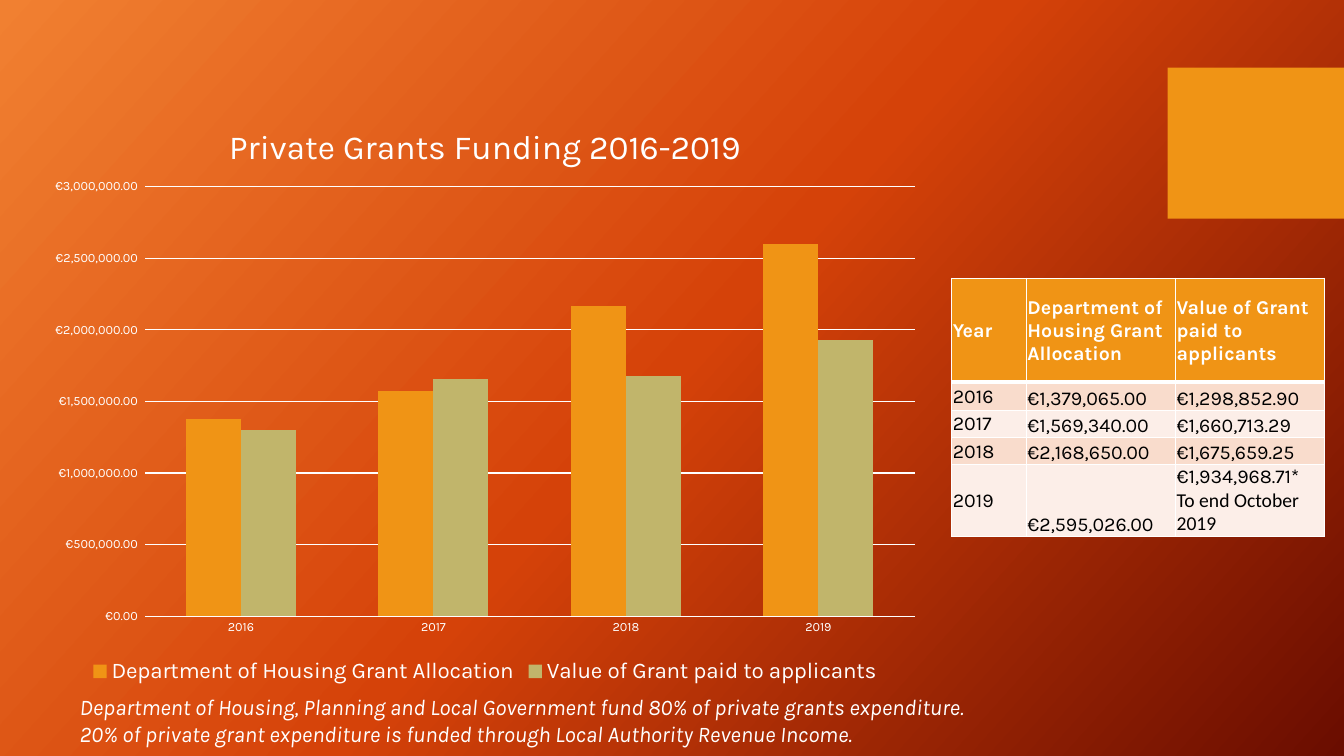
import copy
from dataclasses import dataclass

import pptx
import pptx.chart.data
import pptx.dml.color
import pptx.enum.chart
import pptx.enum.shapes
import pptx.enum.text
import pptx.oxml
import pptx.oxml.ns
import pptx.util
from pptx.util import Inches, Pt


@dataclass(frozen=True)
class Theme:
    font: str = "Karla"
    note_font: str = "Calibri"
    white: str = "FFFFFF"
    black: str = "000000"
    orange: str = "F09415"
    olive: str = "C1B56B"
    bands: tuple = ("F9DCCC", "FCEEE8")
    gradient: tuple = ("F18031", "D54209", "6A0D00")
    title_size: int = 24
    body_size: int = 16
    table_size: int = 14
    axis_size: int = 9


THEME = Theme()
HEADINGS = ("Year", "Department of Housing Grant Allocation",
            "Value of Grant paid to applicants")
GRANTS = (
    ("2016", 1379065.00, 1298852.90),
    ("2017", 1569340.00, 1660713.29),
    ("2018", 2168650.00, 1675659.25),
    ("2019", 2595026.00, 1934968.71),
)
FUNDING_NOTES = (
    "Department of Housing, Planning and Local Government fund 80% of private grants expenditure.",
    "20% of private grant expenditure is funded through Local Authority Revenue Income.",
)
EURO_FORMAT = r'"€"#,##0.00_);[Red]\("€"#,##0.00\)'


def rgb(colour):
    return pptx.dml.color.RGBColor.from_string(colour)


def paint(fill, colour):
    fill.solid()
    fill.fore_color.rgb = rgb(colour)


def style_font(font, size, colour=THEME.white, **extra):
    formats = {"name": THEME.font, "size": Pt(size), **extra}
    for attribute, value in formats.items():
        setattr(font, attribute, value)
    font.color.rgb = rgb(colour)


def paint_background(slide):
    fill = slide.background.fill
    fill.gradient()
    fill.gradient_angle = 318
    stop_list = slide.element.xpath(".//a:gsLst")[0]
    stop_list.append(copy.deepcopy(stop_list[0]))
    for index, (stop, colour) in enumerate(zip(fill.gradient_stops, THEME.gradient)):
        stop.position = index / 2
        stop.color.rgb = rgb(colour)


def add_accent_block(slide):
    block = slide.shapes.add_shape(
        pptx.enum.shapes.MSO_SHAPE.RECTANGLE,
        Inches(11.58), Inches(0.67), Inches(1.75), Inches(1.5))
    block.shadow.inherit = False
    paint(block.fill, THEME.orange)
    block.line.fill.background()


def place_plot(chart, **fractions):
    """Fix the inner plot area, in fractions of the chart frame."""
    modes = {"layoutTarget": "inner", "xMode": "edge", "yMode": "edge"}
    settings = "".join(f'<c:{key} val="{value}"/>'
                       for key, value in {**modes, **fractions}.items())
    plot_area = chart.element.xpath(".//c:plotArea")[0]
    for layout in plot_area.xpath("c:layout"):
        plot_area.remove(layout)
    plot_area.insert(0, pptx.oxml.parse_xml(
        f'<c:layout {pptx.oxml.ns.nsdecls("c")}><c:manualLayout>'
        f'{settings}</c:manualLayout></c:layout>'))


def style_axis(axis):
    axis.major_tick_mark = pptx.enum.chart.XL_TICK_MARK.NONE
    axis.minor_tick_mark = pptx.enum.chart.XL_TICK_MARK.NONE
    axis.format.line.fill.background()
    style_font(axis.tick_labels.font, THEME.axis_size)


def add_funding_chart(slide):
    years, *amounts = zip(*GRANTS)
    data = pptx.chart.data.CategoryChartData(number_format=EURO_FORMAT)
    data.categories = years
    for heading, values in zip(HEADINGS[1:], amounts):
        data.add_series(heading, [round(value, -4) for value in values])
    chart = slide.shapes.add_chart(
        pptx.enum.chart.XL_CHART_TYPE.COLUMN_CLUSTERED,
        Inches(0.37), Inches(1.01), Inches(8.88), Inches(5.82), data).chart
    style_font(chart.font, 10)

    title = chart.chart_title.text_frame
    title.text = "Private Grants Funding 2016-2019"
    style_font(title.paragraphs[0].runs[0].font, THEME.title_size, bold=False)
    chart.has_legend = True
    chart.legend.position = pptx.enum.chart.XL_LEGEND_POSITION.BOTTOM
    chart.legend.include_in_layout = False
    style_font(chart.legend.font, THEME.body_size)

    style_axis(chart.category_axis)
    amount_axis = chart.value_axis
    style_axis(amount_axis)
    amount_axis.minimum_scale = 0
    amount_axis.maximum_scale = 3000000
    amount_axis.major_unit = 500000
    amount_axis.tick_labels.number_format = EURO_FORMAT
    amount_axis.tick_labels.number_format_is_linked = False
    gridline = amount_axis.major_gridlines.format.line
    paint(gridline.fill, THEME.white)
    gridline.width = Pt(0.75)

    columns = chart.plots[0]
    columns.gap_width = 150
    columns.overlap = 0
    columns.vary_by_categories = False
    for series, colour in zip(columns.series, (THEME.orange, THEME.olive)):
        paint(series.format.fill, colour)
    place_plot(chart, x=0.12, y=0.145, w=0.86, h=0.732)


def add_borders(cell, bottom, top):
    properties = cell._tc.get_or_add_tcPr()
    for side, points in (("L", 1), ("R", 1), ("T", top), ("B", bottom)):
        properties.append(pptx.oxml.parse_xml(
            f'<a:ln{side} {pptx.oxml.ns.nsdecls("a")} w="{Pt(points)}">'
            f'<a:solidFill><a:srgbClr val="{THEME.white}"/></a:solidFill></a:ln{side}>'))


def fill_cell(cell, text, row, column):
    is_heading = row == 0
    anchors = pptx.enum.text.MSO_ANCHOR
    formats = {
        "text": text,
        "margin_left": Inches(0.01), "margin_right": Inches(0.01),
        "margin_top": Inches(0.01), "margin_bottom": 0,
        "vertical_anchor": anchors.MIDDLE if is_heading or column == 0 else anchors.BOTTOM,
    }
    for attribute, value in formats.items():
        setattr(cell, attribute, value)
    for paragraph in cell.text_frame.paragraphs:
        for run in paragraph.runs:
            style_font(run.font, THEME.table_size,
                       THEME.white if is_heading else THEME.black, bold=is_heading)
    add_borders(cell, bottom=3 if is_heading else 1, top=3 if row == 1 else 1)
    paint(cell.fill, THEME.orange if is_heading else THEME.bands[(row - 1) % 2])


def add_grants_table(slide):
    rows = [HEADINGS] + [(year, f"€{allocated:,.2f}", f"€{paid:,.2f}")
                         for year, allocated, paid in GRANTS]
    rows[-1] = (*rows[-1][:2], rows[-1][2] + "*\nTo end October 2019")
    table = slide.shapes.add_table(
        len(rows), len(HEADINGS),
        Inches(9.44), Inches(2.76), Inches(3.7), Inches(2.56)).table
    for column, width in zip(table.columns, (0.74, 1.48, 1.48)):
        column.width = Inches(width)
    for table_row, height in zip(table.rows, (1.03, 0.28, 0.27, 0.27, 0.47)):
        table_row.height = Inches(height)
    for row, texts in enumerate(rows):
        for column, text in enumerate(texts):
            fill_cell(table.cell(row, column), text, row, column)
    date_note = table.cell(len(rows) - 1, 2).text_frame.paragraphs[1]
    date_note.runs[0].font.name = THEME.note_font


def add_funding_notes(slide):
    notes = slide.shapes.add_textbox(
        Inches(0.69), Inches(6.83), Inches(10.02), Inches(0.64)).text_frame
    notes.word_wrap = False
    notes.auto_size = pptx.enum.text.MSO_AUTO_SIZE.SHAPE_TO_FIT_TEXT
    notes.text = "\n".join(FUNDING_NOTES)
    for paragraph in notes.paragraphs:
        style_font(paragraph.runs[0].font, THEME.body_size, italic=True)


def main():
    presentation = pptx.Presentation()
    presentation.slide_width = Inches(13.33)
    presentation.slide_height = Inches(7.5)
    slide = presentation.slides.add_slide(presentation.slide_layouts[6])
    paint_background(slide)
    add_accent_block(slide)
    add_funding_chart(slide)
    add_grants_table(slide)
    add_funding_notes(slide)
    presentation.save("out.pptx")


if __name__ == "__main__":
    main()
